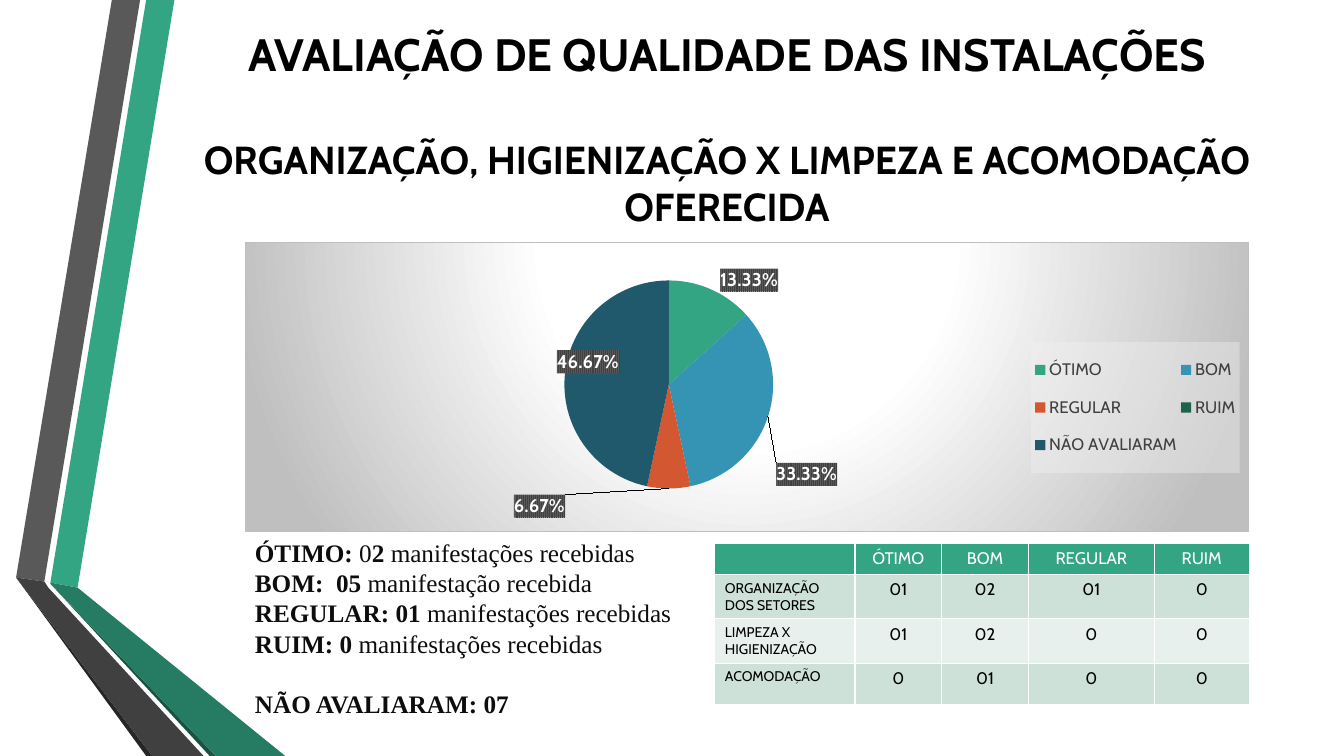
from dataclasses import dataclass

from lxml import etree
from pptx import Presentation
from pptx.chart.data import CategoryChartData
from pptx.dml.color import RGBColor
from pptx.enum.chart import XL_CHART_TYPE, XL_LEGEND_POSITION
from pptx.enum.text import MSO_ANCHOR, MSO_AUTO_SIZE, PP_ALIGN
from pptx.oxml.ns import qn
from pptx.util import Inches, Pt

PIE = XL_CHART_TYPE.PIE
LEGEND_RIGHT = XL_LEGEND_POSITION.RIGHT
CENTER, LEFT = PP_ALIGN.CENTER, PP_ALIGN.LEFT
TOP = MSO_ANCHOR.TOP
NO_AUTOFIT = MSO_AUTO_SIZE.NONE
NAMESPACES = (
    'xmlns:c="http://schemas.openxmlformats.org/drawingml/2006/chart" '
    'xmlns:a="http://schemas.openxmlformats.org/drawingml/2006/main"'
)


@dataclass(frozen=True)
class Theme:
    sans: str = "Cabin"
    serif: str = "Times New Roman"
    black: str = "000000"
    white: str = "FFFFFF"
    ink: str = "0D0D0D"
    gray: str = "404040"
    silver: str = "BFBFBF"
    green: str = "33A583"
    row_dark: str = "CEE1D9"
    row_light: str = "E8F0ED"
    slices: tuple = ("33A583", "3594B4", "D35731", "1F634F", "20596C")
    title_size: float = 32.4
    subtitle_size: float = 27.9
    body_size: float = 18
    label_size: float = 13.3
    table_size: float = 12
    small_size: float = 10


THEME = Theme()

RIBBONS = [
    ("33A583", [(0.5, 5.78), (0.77, 5.83), (1.73, 0), (1.45, 0)]),
    ("595959", [(1.39, 0), (1.11, 0), (0.16, 5.73), (0.44, 5.77)]),
    ("262626", [(0.16, 5.73), (1.45, 7.5), (1.51, 7.5)]),
    ("1A5242", [(0.5, 5.79), (2.08, 7.5), (2.14, 7.5)]),
    ("267C62", [(0.5, 5.79), (2.14, 7.5), (2.83, 7.5), (0.77, 5.83), (0.5, 5.78)]),
    ("404040", [(2.02, 7.5), (0.48, 5.83), (0.44, 5.77), (0.16, 5.73), (1.51, 7.5)]),
]
RATINGS = [
    ("ÓTIMO", 13.33, (0.059, -0.197)),
    ("BOM", 33.33, (0.088, 0.255)),
    ("REGULAR", 6.67, (-0.129, 0.241)),
    ("RUIM", 0, None),
    ("NÃO AVALIARAM", 46.67, (-0.029, -0.06)),
]
SUMMARY = [
    [("ÓTIMO: ", True), ("0", False), ("2 ", True), ("manifestações recebidas", False)],
    [("BOM:  05 ", True), ("manifestação recebida", False)],
    [("REGULAR: 01 ", True), ("manifestações recebidas", False)],
    [("RUIM: 0 ", True), ("manifestações recebidas", False)],
    [("NÃO AVALIARAM: 07", True)],
]
TABLE_ROWS = [
    ["", "ÓTIMO", "BOM", "REGULAR", "RUIM"],
    ["ORGANIZAÇÃO DOS SETORES", "01", "02", "01", "0"],
    ["LIMPEZA X HIGIENIZAÇÃO", "01", "02", "0", "0"],
    ["ACOMODAÇÃO", "0", "01", "0", "0"],
]
COLUMN_WIDTHS = [1.39, 0.86, 0.86, 1.25, 0.94]
ROW_HEIGHTS = [0.31, 0.44, 0.44, 0.41]


def box(*lengths):
    return [Inches(length) for length in lengths]


def style_font(font, name, size, color, bold=False):
    font.name, font.size, font.bold = name, Pt(size), bold
    font.color.rgb = RGBColor.from_string(color)


def add_run(paragraph, text, name, size, color, bold=False):
    run = paragraph.add_run()
    run.text = text
    style_font(run.font, name, size, color, bold)


def chart_xml(content):
    return etree.fromstring(content.replace(">", f" {NAMESPACES}>", 1))


def manual_layout(mode="", **values):
    entries = "".join(f'<c:{key} val="{value}"/>' for key, value in values.items())
    return f"<c:layout><c:manualLayout>{mode}{entries}</c:manualLayout></c:layout>"


def place_in_chart(element, index, mode, **values):
    for layout in element.findall(qn("c:layout")):
        element.remove(layout)
    element.insert(index, chart_xml(manual_layout(mode, **values)))


def add_ribbon(slide, color, points):
    corners = [box(*point) for point in points]
    builder = slide.shapes.build_freeform(*corners[0], scale=1.0)
    builder.add_line_segments(corners[1:], close=True)
    shape = builder.convert_to_shape()
    shape.shadow.inherit = False
    shape.fill.solid()
    shape.fill.fore_color.rgb = RGBColor.from_string(color)
    shape.line.fill.background()


def add_title(slide):
    title = slide.shapes.title
    title.left, title.top, title.width, title.height = box(1.73, 0.02, 10.96, 2.52)
    frame = title.text_frame
    frame.auto_size = NO_AUTOFIT
    frame.word_wrap = True
    frame.vertical_anchor = TOP
    frame.margin_top = Inches(0.24)
    heading, subheading = frame.paragraphs[0], frame.add_paragraph()
    subheading.space_before = Pt(39)
    for paragraph, text, size in (
        (heading, "AVALIAÇÃO DE QUALIDADE DAS INSTALAÇÕES", THEME.title_size),
        (subheading, "ORGANIZAÇÃO, HIGIENIZAÇÃO X LIMPEZA E ACOMODAÇÃO OFERECIDA", THEME.subtitle_size),
    ):
        paragraph.alignment = CENTER
        paragraph.line_spacing = 1.0
        add_run(paragraph, text, THEME.sans, size, THEME.black, True)


def label_xml():
    look = (
        '<c:numFmt formatCode="0.00%" sourceLinked="0"/>'
        '<c:spPr><a:pattFill prst="narVert">'
        f'<a:fgClr><a:srgbClr val="{THEME.gray}"/></a:fgClr>'
        '<a:bgClr><a:srgbClr val="595959"/></a:bgClr></a:pattFill></c:spPr>'
        '<c:txPr><a:bodyPr/><a:p><a:pPr>'
        f'<a:defRPr sz="{THEME.label_size * 100:.0f}" b="1">'
        f'<a:solidFill><a:srgbClr val="{THEME.white}"/></a:solidFill>'
        f'<a:latin typeface="{THEME.sans}"/></a:defRPr></a:pPr></a:p></c:txPr>'
        '<c:dLblPos val="ctr"/><c:showLegendKey val="0"/><c:showVal val="0"/>'
        '<c:showCatName val="0"/><c:showSerName val="0"/><c:showPercent val="1"/>'
        '<c:showBubbleSize val="0"/>'
    )
    labels = ""
    for index, (_, _, offset) in enumerate(RATINGS):
        body = '<c:delete val="1"/>'
        if offset:
            body = manual_layout(x=offset[0], y=offset[1]) + look
        labels += f'<c:dLbl><c:idx val="{index}"/>{body}</c:dLbl>'
    return f'<c:dLbls>{labels}{look}<c:showLeaderLines val="1"/></c:dLbls>'


def add_rating_chart(slide):
    data = CategoryChartData()
    data.categories = [name for name, _, _ in RATINGS]
    data.add_series("Series 1", [value for _, value, _ in RATINGS])
    chart = slide.shapes.add_chart(PIE, *box(2.43, 2.4, 9.96, 2.88), data).chart
    chart.has_title = False
    style_font(chart.font, THEME.sans, THEME.small_size, THEME.black)
    series = chart.plots[0].series[0]
    for index, color in enumerate(THEME.slices):
        fill = series.points[index].format.fill
        fill.solid()
        fill.fore_color.rgb = RGBColor.from_string(color)
    series._element.find(qn("c:cat")).addprevious(chart_xml(label_xml()))

    chart.has_legend = True
    legend = chart.legend
    legend.position = LEGEND_RIGHT
    legend.include_in_layout = False
    style_font(legend.font, THEME.sans, THEME.table_size, THEME.gray)
    edges = '<c:xMode val="edge"/><c:yMode val="edge"/>'
    place_in_chart(legend._element, 1, edges, x=0.783, y=0.345, w=0.208, h=0.452)
    legend._element.find(qn("c:overlay")).addnext(chart_xml(
        '<c:spPr><a:solidFill><a:srgbClr val="F2F2F2"><a:alpha val="39000"/>'
        '</a:srgbClr></a:solidFill></c:spPr>'))

    chart_element = chart._chartSpace.find(qn("c:chart"))
    place_in_chart(chart_element.find(qn("c:plotArea")), 0,
                   '<c:layoutTarget val="inner"/>' + edges, x=0.318, y=0.131, w=0.208, h=0.721)
    stops = "".join(
        f'<a:gs pos="{position}000"><a:srgbClr val="{color}"/></a:gs>'
        for position, color in ((0, THEME.white), (39, THEME.white), (100, THEME.silver)))
    chart_element.addnext(chart_xml(
        f'<c:spPr><a:gradFill><a:gsLst>{stops}</a:gsLst><a:path path="circle">'
        '<a:fillToRect l="50000" t="-80000" r="50000" b="180000"/></a:path></a:gradFill>'
        f'<a:ln w="9525"><a:solidFill><a:srgbClr val="{THEME.silver}"/></a:solidFill></a:ln></c:spPr>'))


def add_summary(slide):
    frame = slide.shapes.add_textbox(*box(2.43, 5.28, 4.38, 2.22)).text_frame
    frame.word_wrap = True
    for index, runs in enumerate(SUMMARY):
        paragraph = frame.add_paragraph() if index else frame.paragraphs[0]
        for text, bold in runs:
            add_run(paragraph, text, THEME.serif, THEME.body_size, THEME.ink, bold)
    paragraph.space_before = Pt(21.5)


def add_rating_table(slide):
    table = slide.shapes.add_table(4, 5, *box(7.09, 5.39, 5.3, 1.6)).table
    for column, width in zip(table.columns, COLUMN_WIDTHS):
        column.width = Inches(width)
    for row_index, texts in enumerate(TABLE_ROWS):
        table.rows[row_index].height = Inches(ROW_HEIGHTS[row_index])
        band = THEME.row_dark if row_index % 2 else THEME.row_light
        for column_index, text in enumerate(texts):
            cell = table.cell(row_index, column_index)
            cell.fill.solid()
            cell.fill.fore_color.rgb = RGBColor.from_string(band if row_index else THEME.green)
            paragraph = cell.text_frame.paragraphs[0]
            paragraph.alignment = CENTER if column_index else LEFT
            if text:
                size = THEME.table_size if column_index else THEME.small_size
                add_run(paragraph, text, THEME.sans, size, THEME.black if row_index else THEME.white)
            else:
                paragraph._p.get_or_add_endParaRPr().set("sz", f"{THEME.table_size * 100}")


def main():
    presentation = Presentation()
    presentation.slide_width, presentation.slide_height = box(13.33, 7.5)
    slide = presentation.slides.add_slide(presentation.slide_layouts[5])
    for color, points in RIBBONS:
        add_ribbon(slide, color, points)
    add_title(slide)
    add_rating_chart(slide)
    add_summary(slide)
    add_rating_table(slide)
    presentation.save("out.pptx")


if __name__ == "__main__":
    main()
